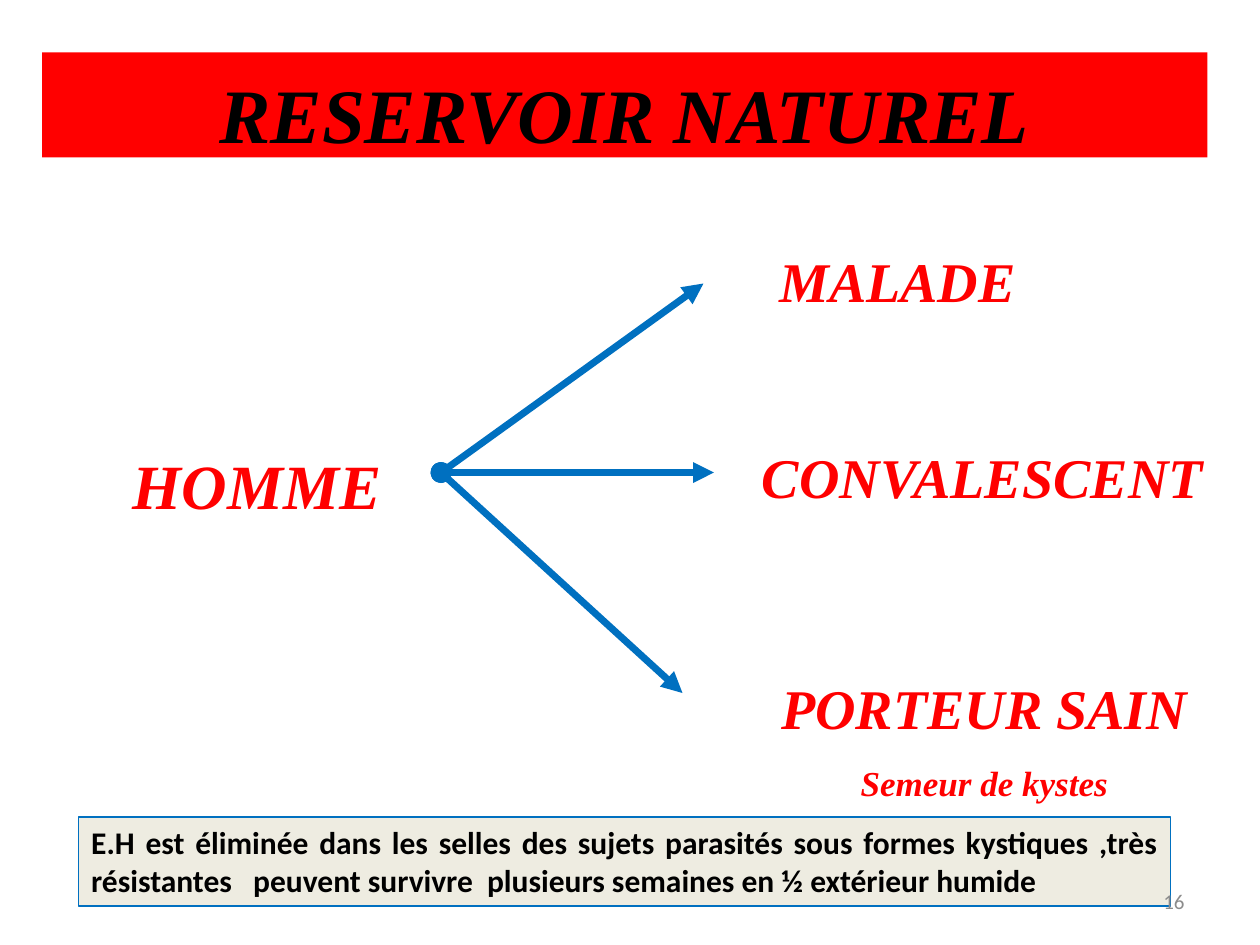
import pptx
import pptx.util
import pptx.dml.color
import pptx.enum.text
import pptx.enum.shapes
import pptx.oxml
import pptx.oxml.ns
import lxml.etree

Pt = pptx.util.Pt
Align = pptx.enum.text.PP_ALIGN
Anchor = pptx.enum.text.MSO_ANCHOR
RECTANGLE = pptx.enum.shapes.MSO_SHAPE.RECTANGLE
COLORS = {"red": "FF0000", "blue": "0070C0", "black": "000000",
          "white": "FFFFFF", "beige": "EEECE1", "gray": "8C8C8C"}
SERIF = "Times New Roman"


def color(name):
    return pptx.dml.color.RGBColor.from_string(COLORS[name])


def write(box, lines, font, ink, align, bold=True, italic=False, top=3.6):
    frame = box.text_frame
    frame.word_wrap = True
    frame.auto_size = pptx.enum.text.MSO_AUTO_SIZE.NONE
    frame.vertical_anchor = Anchor.TOP
    frame.margin_top = Pt(top)
    for index, (text, size) in enumerate(lines):
        para = frame.paragraphs[0] if index == 0 else frame.add_paragraph()
        para.text = text
        para.alignment = align
        para.space_before = Pt(12 if index else 0)
        para.font.name = font
        para.font.size = Pt(size)
        para.font.bold = bold
        para.font.italic = italic
        para.font.color.rgb = color(ink)


deck = pptx.Presentation()
deck.slide_width, deck.slide_height = Pt(720), Pt(540)
page = deck.slides.add_slide(deck.slide_layouts[5])

title = page.shapes.title
title.left, title.top, title.width, title.height = Pt(24), Pt(30), Pt(666), Pt(60)
title.fill.solid()
title.fill.fore_color.rgb = color("red")
write(title, [("RESERVOIR NATUREL", 44)], SERIF, "black", Align.CENTER, italic=True, top=8)

host = page.shapes.add_textbox(Pt(60), Pt(247.5), Pt(174), Pt(50.5))
write(host, [("HOMME", 36)], SERIF, "red", Align.CENTER, italic=True, top=7.5)

for end_x, end_y in [(402, 162), (408, 270), (390, 396)]:
    arrow = page.shapes.add_connector(
        pptx.enum.shapes.MSO_CONNECTOR.STRAIGHT, Pt(252), Pt(270), Pt(end_x), Pt(end_y))
    arrow.line.color.rgb = color("blue")
    arrow.line.width = Pt(4)
    line = arrow.line._get_or_add_ln()
    for tag, kind in [("a:headEnd", "oval"), ("a:tailEnd", "triangle")]:
        lxml.etree.SubElement(line, pptx.oxml.ns.qn(tag), type=kind)
    lxml.etree.SubElement(arrow._element.spPr, pptx.oxml.ns.qn("a:effectLst"))

carriers = [
    (426, 134, 174, 46, [("MALADE", 32)]),
    (422.5, 246, 278, 45.5, [("CONVALESCENT", 32)]),
    (427.5, 378, 270, 82, [("PORTEUR SAIN", 32), ("Semeur de kystes", 20)]),
]
for left, top, width, height, lines in carriers:
    carrier = page.shapes.add_shape(RECTANGLE, Pt(left), Pt(top), Pt(width), Pt(height))
    carrier.shadow.inherit = False
    carrier.fill.solid()
    carrier.fill.fore_color.rgb = color("white")
    carrier.line.fill.background()
    write(carrier, lines, SERIF, "red", Align.CENTER, italic=True, top=7)

note = page.shapes.add_shape(RECTANGLE, Pt(45), Pt(466.8), Pt(624), Pt(51))
note.shadow.inherit = False
note.fill.solid()
note.fill.fore_color.rgb = color("beige")
note.line.color.rgb = color("blue")
note.line.width = Pt(0.75)
write(note, [("E.H est éliminée dans les selles des sujets parasités sous formes kystiques ,très "
              "résistantes   peuvent survivre  plusieurs semaines en ½ extérieur humide ", 18)],
      "Calibri", "black", Align.JUSTIFY)

number = page.shapes.add_textbox(Pt(516), Pt(500.5), Pt(168), Pt(28.75))
write(number, [("16", 12)], "Calibri", "gray", Align.RIGHT, bold=False)
number.text_frame.vertical_anchor = Anchor.MIDDLE

deck.save("out.pptx")
